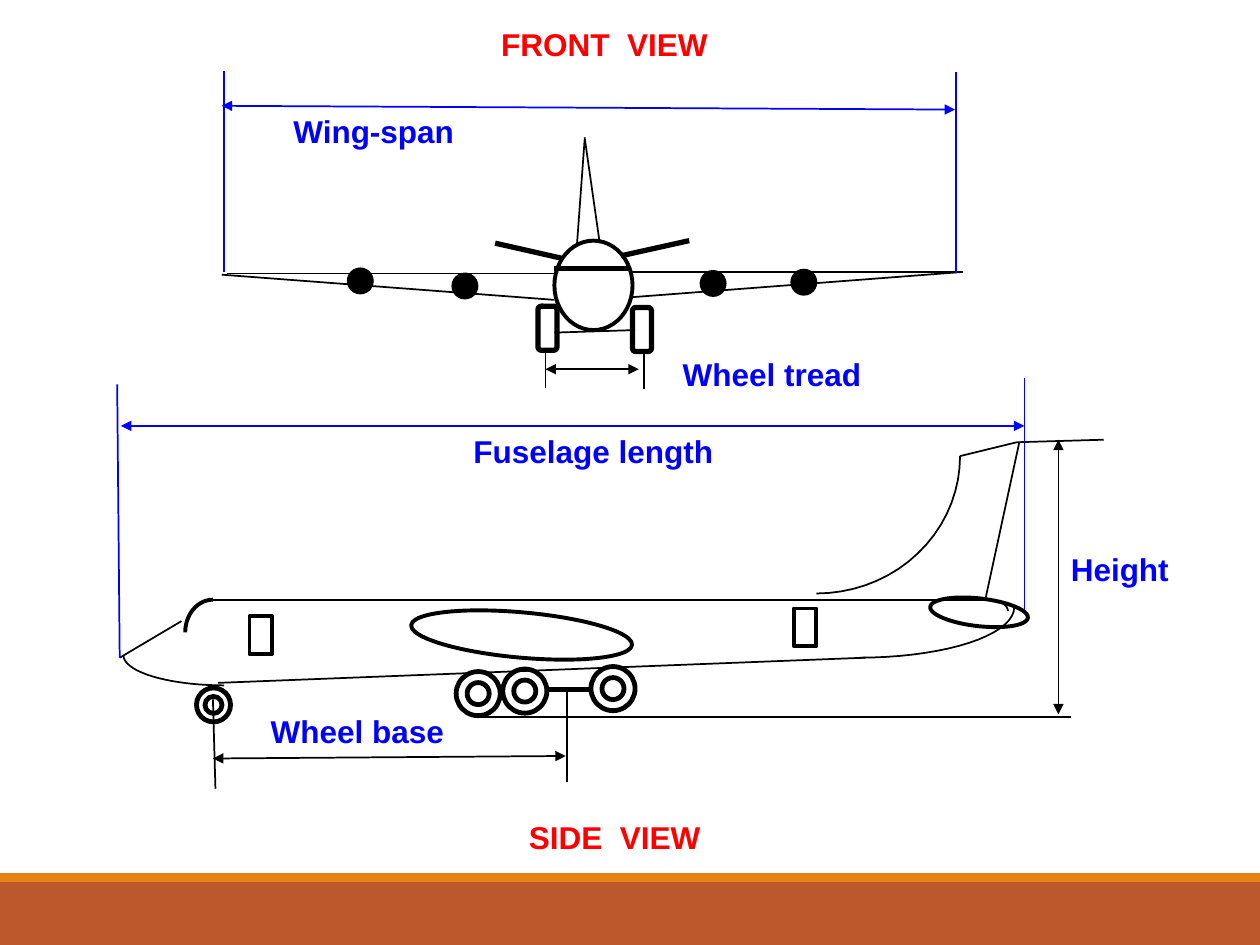
import math

from lxml import etree
from pptx import Presentation
from pptx import util as u
from pptx.dml.color import RGBColor
from pptx.enum import shapes, text
from pptx.oxml.ns import qn

PX = 9144  # EMU in one px, 100 px to the inch
BLACK = RGBColor(0x00, 0x00, 0x00)
BLUE = RGBColor(0x00, 0x00, 0xFF)
RED = RGBColor(0xFF, 0x00, 0x00)
RUST = RGBColor(0xBD, 0x58, 0x2C)
ORANGE = RGBColor(0xE4, 0x83, 0x12)
THIN, MEDIUM, RING, THICK = 1, 2.25, 2.75, 3
KIND = shapes.MSO_SHAPE

prs = Presentation()
prs.slide_width, prs.slide_height = 1000 * PX, 750 * PX
slide = prs.slides.add_slide(prs.slide_layouts[6])
canvas = slide.shapes


def style(shape, weight, fill=None, color=BLACK):
    """Set fill and outline; a weight of 0 means no outline."""
    shape.shadow.inherit = False
    if fill is None:
        shape.fill.background()
    else:
        shape.fill.solid()
        shape.fill.fore_color.rgb = fill
    if weight:
        shape.line.color.rgb = color
        shape.line.width = u.Pt(weight)
    else:
        shape.line.fill.background()


def add_line(x1, y1, x2, y2, weight=THIN, color=BLACK, arrows=False):
    line = canvas.add_connector(
        shapes.MSO_CONNECTOR.STRAIGHT, x1 * PX, y1 * PX, x2 * PX, y2 * PX)
    line.line.color.rgb = color
    line.line.width = u.Pt(weight)
    if arrows:
        for end in ("a:headEnd", "a:tailEnd"):
            etree.SubElement(line.line._get_or_add_ln(), qn(end), type="triangle")
    etree.SubElement(line._element.spPr, qn("a:effectLst"))


# Footer bars
for top, height, color in [(700, 50, RUST), (693, 7, ORANGE)]:
    bar = canvas.add_shape(KIND.RECTANGLE, 0, top * PX, 1000 * PX, height * PX)
    style(bar, 0, color)

# Bodies, engines, wheels and doors: kind, box, weight, fill, rotation
parts = [
    (KIND.OVAL, 440, 191, 62, 71, MEDIUM, None, 0),      # front fuselage
    (KIND.OVAL, 738, 475, 78, 22, MEDIUM, None, 6.4),    # tailplane
    (KIND.OVAL, 326, 486, 176, 36, MEDIUM, None, 5.1),   # side wing
]
for x, y in [(359, 217), (556, 215), (276, 213), (628, 214)]:
    parts.append((KIND.OVAL, x, y, 20, 20, THIN, BLACK, 0))  # engines
for x, y in [(427, 243), (502, 244)]:
    parts.append((KIND.FLOWCHART_ALTERNATE_PROCESS, x, y, 15, 35, THICK, None, 0))
for x, y, size in [(362, 533, 35), (399, 531, 35), (469, 529, 35), (156, 546, 27)]:
    parts.append((KIND.DONUT, x, y, size, size, RING, None, 0))
for x, y in [(198, 489), (630, 483)]:
    parts.append((KIND.RECTANGLE, x, y, 18, 30, MEDIUM, None, 0))  # doors

for kind, x, y, width, height, weight, fill, rotation in parts:
    part = canvas.add_shape(kind, x * PX, y * PX, width * PX, height * PX)
    part.rotation = rotation
    style(part, weight, fill)

# Quarter ellipses, each leaving its first point horizontally
for x1, y1, x2, y2, weight in [
    (169, 476, 147, 502, MEDIUM),  # cockpit
    (178, 544, 98, 520, THIN),     # nose
    (784, 476, 800, 485, THIN),    # upper tail
    (682, 522, 805, 482, THIN),    # lower tail
    (648, 471, 762, 362, THIN),    # fin
]:
    angles = [math.radians(step * 5) for step in range(19)]
    points = [(round((x1 + (x2 - x1) * math.sin(a)) * PX),
               round((y2 + (y1 - y2) * math.cos(a)) * PX)) for a in angles]
    curve = canvas.build_freeform(*points[0])
    curve.add_line_segments(points[1:], close=False)
    style(curve.convert_to_shape(), weight)

# Aircraft edges
for edge in [
    (502, 216, 764, 216), (180, 217, 443, 217),  # wings, front view
    (176, 218, 440, 238), (762, 216, 500, 236),
    (464, 111, 458, 193), (464, 109, 476, 193),  # fin, front view
    (440, 264, 504, 262),                        # axle
    (164, 476, 789, 476), (144, 493, 95, 522), (173, 542, 687, 522),
    (762, 362, 807, 351), (809, 351, 782, 476),  # fin, side view
]:
    # The axle joins the two wheels under the front fuselage
    add_line(*edge)
for edge in [(440, 213, 500, 213), (493, 203, 547, 191),
             (446, 205, 393, 193), (436, 547, 469, 547)]:
    add_line(*edge, weight=THICK)

# Extension lines
for edge in [(376, 569, 850, 569), (807, 351, 876, 349),
             (169, 555, 171, 626), (450, 548, 450, 621),
             (433, 278, 433, 308), (511, 279, 511, 309)]:
    add_line(*edge)
for edge in [(813, 484, 813, 300), (95, 522, 93, 305),
             (178, 216, 178, 56), (759, 217, 759, 57)]:
    add_line(*edge, color=BLUE)

# Dimension lines
for *edge, color in [
    (840, 349, 840, 567, BLACK),  # height
    (96, 338, 813, 338, BLUE),    # fuselage length
    (169, 602, 449, 600, BLACK),  # wheel base
    (176, 84, 758, 87, BLUE),     # wing-span
    (433, 293, 507, 293, BLACK),  # wheel tread
]:
    add_line(*edge, color=color, arrows=True)

for wording, x, y, width, color in [
    ("SIDE  VIEW", 410, 644, 156, RED),
    ("FRONT  VIEW", 388, 15, 184, RED),
    ("Wing-span", 223, 84, 148, BLUE),
    ("Fuselage length", 366, 338, 210, BLUE),
    ("Height", 840, 432, 98, BLUE),
    ("Wheel tread", 532, 277, 162, BLUE),
    ("Wheel base", 205, 560, 158, BLUE),
]:
    label = canvas.add_textbox(x * PX, y * PX, width * PX, 40 * PX)
    label.text_frame.word_wrap = False
    label.text_frame.auto_size = text.MSO_AUTO_SIZE.SHAPE_TO_FIT_TEXT
    run = label.text_frame.paragraphs[0].add_run()
    run.text = wording
    run.font.name = "Arial"
    run.font.size = u.Pt(18)
    run.font.bold = True
    run.font.color.rgb = color

prs.save("out.pptx")
